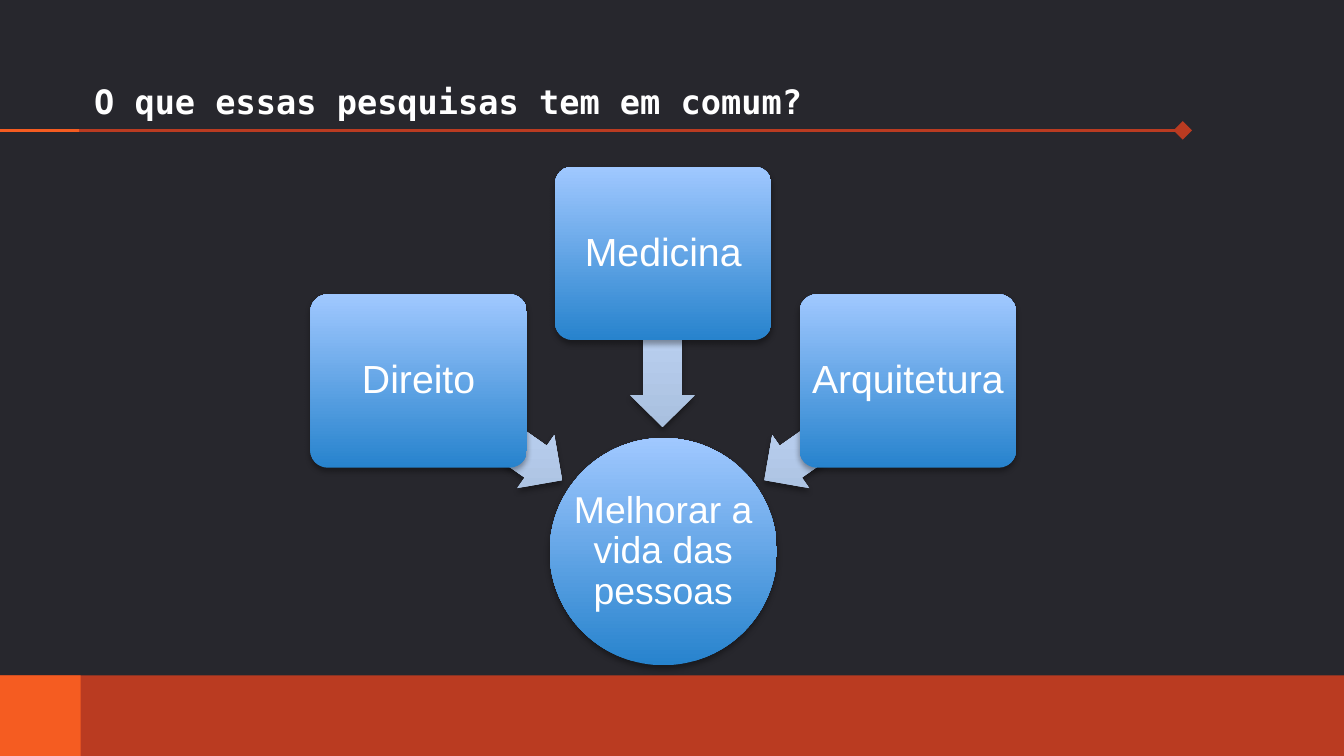
from pptx import Presentation
from pptx.dml.color import RGBColor as RGB
from pptx.enum.shapes import MSO_CONNECTOR as Conn, MSO_SHAPE as Shp
from pptx.enum.text import MSO_ANCHOR as Anchor, PP_ALIGN as Align
from pptx.oxml import parse_xml
from pptx.oxml.ns import nsdecls
from pptx.util import Inches, Pt

WIDE = 10
HIGH = WIDE * 9 / 16
BAND = 0.6
BLUE = ("2783CD", "A0C8FF")
PALE = ("A9C0DF", "CADFFF")
RED, ORANGE, WHITE = "BA3B21", "F55C21", "FFFFFF"
SHADOW = (
    f'<a:effectLst {nsdecls("a")}><a:outerShdw blurRad="{Pt(3.1)}" dist="{Pt(1.8)}" '
    'dir="5400000" rotWithShape="0"><a:srgbClr val="000000"><a:alpha val="35000"/>'
    "</a:srgbClr></a:outerShdw></a:effectLst>"
)


def color(code):
    return RGB.from_string(code)


def style(item, vals):
    for key, val in vals.items():
        setattr(item, key, val)


def inches(*nums):
    return [Inches(n) for n in nums]


def write(shape, text, size, font, pad, frame, para, bold=False):
    tf = shape.text_frame
    sides = ("left", "top", "right", "bottom")
    style(tf, {f"margin_{side}": Inches(pad) for side in sides})
    style(tf, {"word_wrap": True, **frame})
    tf.text = text
    par = tf.paragraphs[0]
    style(par, para)
    face = par.runs[0].font
    style(face, {"size": Pt(size), "name": font, "bold": bold})
    face.color.rgb = color(WHITE)


def add_bar(slide, width, fill):
    bar = slide.shapes.add_shape(
        Shp.RECTANGLE, *inches(0, HIGH - BAND, width, BAND))
    bar.shadow.inherit = False
    bar.fill.solid()
    bar.fill.fore_color.rgb = color(fill)
    bar.line.fill.background()


def add_rule(slide, end, tint, tip=None):
    rule = slide.shapes.add_connector(Conn.STRAIGHT, *inches(-0.01, 0.97, end, 0.97))
    rule.line.color.rgb = color(tint)
    rule.line.width = Pt(1.5)
    if tip:
        rule.line._get_or_add_ln().append(parse_xml(
            f'<a:tailEnd {nsdecls("a")} type="{tip}" w="lg" len="lg"/>'))
    rule._element.spPr.append(parse_xml(f'<a:effectLst {nsdecls("a")}/>'))


def add_glow(group, kind, box, tints, adj=(), turn=0):
    """Shape with a soft shadow and a gradient that stays upright when turned."""
    shape = group.shapes.add_shape(kind, *inches(*box))
    shape.rotation = turn
    for i, val in enumerate(adj):
        shape.adjustments[i] = val
    shape.fill.gradient()
    shape.fill.gradient_angle = (90 + turn) % 360
    for stop, tint in zip(shape.fill.gradient_stops, tints):
        stop.color.rgb = color(tint)
    shape.line.fill.background()
    shape._element.spPr.append(parse_xml(SHADOW))


def add_node(group, kind, box, text, size, pad, adj=()):
    add_glow(group, kind, box, BLUE, adj)
    label = group.shapes.add_textbox(*inches(*box))
    write(label, text, size, "Arial", pad, {"vertical_anchor": Anchor.MIDDLE},
          {"alignment": Align.CENTER, "line_spacing": 0.9})


def main():
    prs = Presentation()
    style(prs, {"slide_width": Inches(WIDE), "slide_height": Inches(HIGH)})
    slide = prs.slides.add_slide(prs.slide_layouts[5])
    slide.background.fill.solid()
    slide.background.fill.fore_color.rgb = color("27272D")

    # Rule under the title and footer band
    add_rule(slide, 8.8, RED, "diamond")
    add_bar(slide, WIDE, RED)
    add_bar(slide, BAND, ORANGE)
    add_rule(slide, 0.59, ORANGE)

    # Title
    title = slide.shapes.title
    style(title, dict(zip(("left", "top", "width", "height"),
                          inches(0.6, 0.4, 8.2, 0.6))))
    write(title, "O que essas pesquisas tem em comum?", 18, "DejaVu Sans Mono", 0.1,
          {"vertical_anchor": Anchor.BOTTOM}, {"alignment": Align.LEFT}, True)

    # Shared goal, with an arrow from each field
    group = slide.shapes.add_group_shape()
    add_node(group, Shp.OVAL, (4.09, 3.26, 1.69, 1.69),
             "Melhorar a vida das pessoas", 20, 0.01)
    fields = [
        ("Direito", 2.19, (3, 2.96), 215),
        ("Medicina", 1.24, (4.28, 2.29), 270),
        ("Arquitetura", 2.19, (5.57, 2.96), 325),
    ]
    for i, (name, top, spot, turn) in enumerate(fields):
        add_glow(group, Shp.LEFT_ARROW, (*spot, 1.3, 0.48), PALE, (0.6, 0.5), turn)
        add_node(group, Shp.ROUNDED_RECTANGLE, (2.31 + 1.82 * i, top, 1.61, 1.29),
                 name, 21, 0.04, (0.1,))

    prs.save("out.pptx")


if __name__ == "__main__":
    main()
